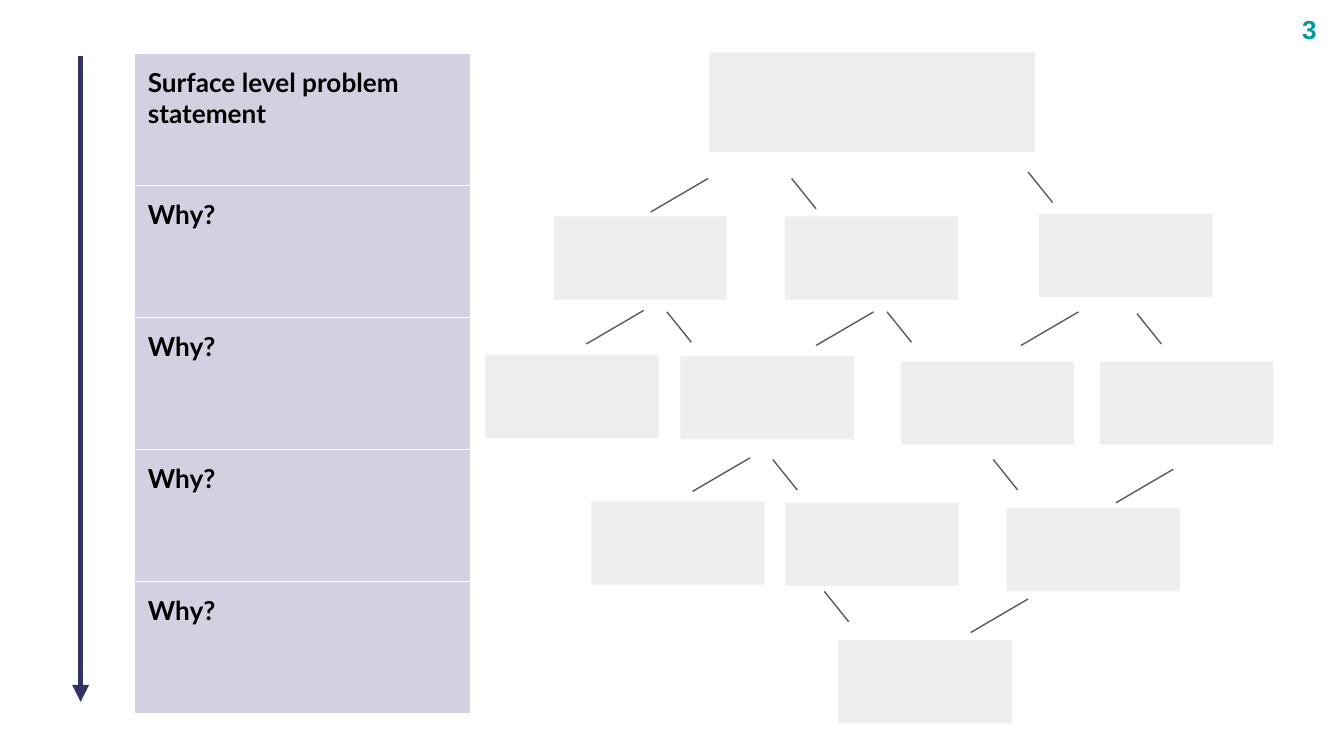
from lxml import etree
from pptx import Presentation
from pptx.dml.color import RGBColor
from pptx.enum.shapes import MSO_CONNECTOR, MSO_SHAPE
from pptx.enum.text import MSO_ANCHOR
from pptx.oxml.ns import qn
from pptx.util import Pt

STRAIGHT = MSO_CONNECTOR.STRAIGHT
RECTANGLE = MSO_SHAPE.RECTANGLE
MIDDLE = MSO_ANCHOR.MIDDLE

COLORS = {
    "number": "009B99",
    "text": "000000",
    "cell": "D1D1E1",
    "border": "FFFFFF",
    "arrow": "333366",
    "box": "EEEEEE",
    "branch": "595959",
}
INSET = 7.2
LEVELS = ["Surface level problem statement"] + ["Why?"] * 4
ROW_HEIGHT = 70.8

CAUSE_SIZE = (92.9, 44.6)
CAUSES = [
    (296.6, 115.9), (420.5, 115.9), (556.6, 114.5),
    (259.9, 190.1), (364.5, 190.8), (482.6, 193.7), (589.3, 193.7),
    (316.8, 268.6), (420.7, 269.3), (539.3, 272.2),
    (449.1, 342.9),
]
# Each step runs from the start of a branch to its lower end.
LEFT_STEP = (-30.8, 18)
LEFT_BRANCHES = [
    (379.4, 95.6), (344.9, 166.3), (468, 167.1), (577.8, 167.1),
    (401.8, 245.3), (628.6, 251.4), (550.8, 320.9),
]
RIGHT_STEP = (13.1, 16.3)
RIGHT_BRANCHES = [
    (424.1, 95.6), (550.8, 92.2), (357.3, 167.1), (475.2, 167.1),
    (609.1, 168), (414, 246.2), (532.1, 246.2), (441.6, 316.8),
]


def color(name):
    return RGBColor.from_string(COLORS[name])


def add_span(para, text, font, color_name):
    span = para.add_run()
    span.text = text
    span.font.name = font
    span.font.size = Pt(14)
    span.font.bold = True
    span.font.color.rgb = color(color_name)


def set_margins(holder):
    holder.margin_left = holder.margin_right = Pt(INSET)
    holder.margin_top = holder.margin_bottom = Pt(INSET)


def add_page_number(page, number):
    box = page.shapes.add_textbox(Pt(690.5), Pt(0), Pt(43.2), Pt(31))
    frame = box.text_frame
    frame.word_wrap = True
    frame.vertical_anchor = MIDDLE
    set_margins(frame)
    add_span(frame.paragraphs[0], number, "Arial", "number")


def add_borders(cell):
    """Put white lines on all four sides, ahead of the cell fill."""
    properties = cell._tc.get_or_add_tcPr()
    for index, side in enumerate(("a:lnL", "a:lnR", "a:lnT", "a:lnB")):
        line = etree.Element(qn(side), w=str(Pt(0.75)))
        fill = etree.SubElement(line, qn("a:solidFill"))
        etree.SubElement(fill, qn("a:srgbClr"), val=COLORS["border"])
        properties.insert(index, line)


def add_levels(page):
    frame = page.shapes.add_table(
        len(LEVELS), 1, Pt(72), Pt(28.4), Pt(180), Pt(ROW_HEIGHT * len(LEVELS)))
    table = frame.table
    table.first_row = table.horz_banding = False
    table.columns[0].width = Pt(180)
    for index, text in enumerate(LEVELS):
        table.rows[index].height = Pt(ROW_HEIGHT)
        cell = table.cell(index, 0)
        set_margins(cell)
        cell.fill.solid()
        cell.fill.fore_color.rgb = color("cell")
        add_borders(cell)
        add_span(cell.text_frame.paragraphs[0], text, "Lato", "text")


def add_box(page, left, top, width, height):
    box = page.shapes.add_shape(RECTANGLE, Pt(left), Pt(top), Pt(width), Pt(height))
    box.shadow.inherit = False
    box.fill.solid()
    box.fill.fore_color.rgb = color("box")
    box.line.fill.background()


def add_line(page, start, step, color_name, weight):
    x, y = start
    dx, dy = step
    line = page.shapes.add_connector(STRAIGHT, Pt(x), Pt(y), Pt(x + dx), Pt(y + dy))
    line.line.color.rgb = color(color_name)
    line.line.width = Pt(weight)
    etree.SubElement(line._element.spPr, qn("a:effectLst"))
    return line


def add_depth_arrow(page):
    arrow = add_line(page, (43.2, 29.8), (0, 346.2), "arrow", 3)
    outline = arrow.line._get_or_add_ln()
    etree.SubElement(outline, qn("a:tailEnd"), type="triangle")


def main():
    deck = Presentation()
    deck.slide_width, deck.slide_height = Pt(720), Pt(405)
    page = deck.slides.add_slide(deck.slide_layouts[6])
    add_page_number(page, "3")
    add_levels(page)
    add_depth_arrow(page)
    add_box(page, 380, 28, 174.4, 53.5)
    for left, top in CAUSES:
        add_box(page, left, top, *CAUSE_SIZE)
    for starts, step in ((LEFT_BRANCHES, LEFT_STEP), (RIGHT_BRANCHES, RIGHT_STEP)):
        for start in starts:
            add_line(page, start, step, "branch", 0.75)
    deck.save("out.pptx")


if __name__ == "__main__":
    main()
